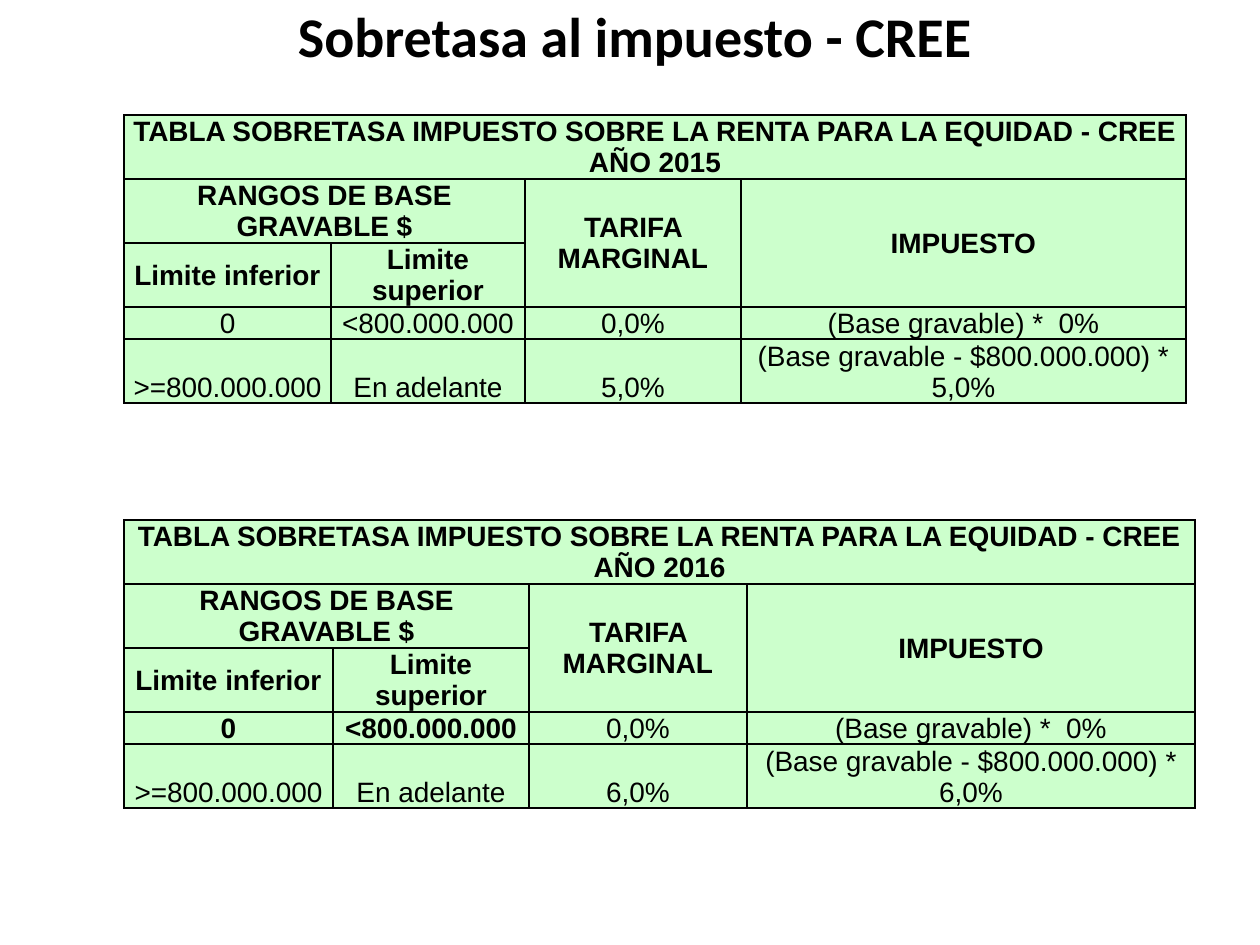
from dataclasses import dataclass

from lxml import etree
from pptx import Presentation
from pptx import util as u
from pptx.dml.color import RGBColor
from pptx.enum import text
from pptx.oxml import ns

PX_PER_INCH = 126


@dataclass(frozen=True)
class Theme:
    black: str = "000000"
    white: str = "FFFFFF"
    green: str = "CCFFCC"
    title_font: str = "Calibri"
    table_font: str = "Arial"
    title_size: int = 32
    table_size: int = 16
    border_width: int = 1


THEME = Theme()
ROW_HEIGHTS = (64, 64, 64, 32, 64)
HEADER_ROWS = 3
MERGES = (((0, 0), (0, 3)), ((1, 0), (1, 1)), ((1, 2), (2, 2)), ((1, 3), (2, 3)))


def px(length):
    return u.Emu(round(length * u.Inches(1) / PX_PER_INCH))


def color(value):
    return RGBColor.from_string(value)


def style_paragraph(paragraph, name, size, bold):
    paragraph.alignment = text.PP_ALIGN.CENTER
    font = paragraph.font
    font.name, font.size, font.bold = name, u.Pt(size), bold
    font.color.rgb = color(THEME.black)


def add_borders(cell):
    properties = cell._tc.get_or_add_tcPr()
    for side in ("lnL", "lnR", "lnT", "lnB"):
        line = etree.SubElement(properties, ns.qn(f"a:{side}"), w=str(u.Pt(THEME.border_width)))
        fill = etree.SubElement(line, ns.qn("a:solidFill"))
        etree.SubElement(fill, ns.qn("a:srgbClr"), val=THEME.black)


def style_cell(cell, bold, anchor):
    add_borders(cell)
    cell.fill.solid()
    cell.fill.fore_color.rgb = color(THEME.green)
    cell.margin_left = cell.margin_right = cell.margin_top = px(1)
    cell.margin_bottom = 0
    cell.vertical_anchor = anchor
    style_paragraph(cell.text_frame.paragraphs[0], THEME.table_font, THEME.table_size, bold)


def add_title(slide, left, top, width, height):
    title = slide.shapes.title
    title.left, title.top, title.width, title.height = map(px, (left, top, width, height))
    title.fill.solid()
    title.fill.fore_color.rgb = color(THEME.white)
    title.text = "Sobretasa al impuesto - CREE"
    title.text_frame.vertical_anchor = text.MSO_ANCHOR.MIDDLE
    style_paragraph(title.text_frame.paragraphs[0], THEME.title_font, THEME.title_size, True)


def add_rate_table(slide, left, top, column_widths, year, rate, bold_cells=()):
    rows = (
        (f"TABLA SOBRETASA IMPUESTO SOBRE LA RENTA PARA LA EQUIDAD - CREE AÑO {year}", "", "", ""),
        ("RANGOS DE BASE GRAVABLE $", "", "TARIFA MARGINAL", "IMPUESTO"),
        ("Limite inferior", "Limite superior", "", ""),
        ("0", "<800.000.000", "0,0%", "(Base gravable) *  0%"),
        (">=800.000.000", "En adelante", rate, f"(Base gravable - $800.000.000) * {rate}"),
    )
    frame = slide.shapes.add_table(
        len(rows), len(column_widths), px(left), px(top), px(sum(column_widths)), px(sum(ROW_HEIGHTS))
    )
    table = frame.table
    table.first_row = table.horz_banding = False
    for column, width in zip(table.columns, column_widths):
        column.width = px(width)
    for row, height in zip(table.rows, ROW_HEIGHTS):
        row.height = px(height)
    for row_index, values in enumerate(rows):
        is_header = row_index < HEADER_ROWS
        anchor = text.MSO_ANCHOR.MIDDLE if is_header else text.MSO_ANCHOR.BOTTOM
        for column_index, value in enumerate(values):
            cell = table.cell(row_index, column_index)
            cell.text = value
            style_cell(cell, is_header or (row_index, column_index) in bold_cells, anchor)
    for first, last in MERGES:
        table.cell(*first).merge(table.cell(*last))


def main():
    presentation = Presentation()
    presentation.slide_width, presentation.slide_height = px(1260), px(945)
    slide = presentation.slides.add_slide(presentation.slide_layouts[5])
    add_title(slide, 174, 6, 922, 59)
    add_rate_table(slide, 124, 115, (207, 194, 216, 445), 2015, "5,0%")
    add_rate_table(slide, 124, 520, (209, 196, 218, 448), 2016, "6,0%", ((3, 0), (3, 1)))
    presentation.save("out.pptx")


if __name__ == "__main__":
    main()
